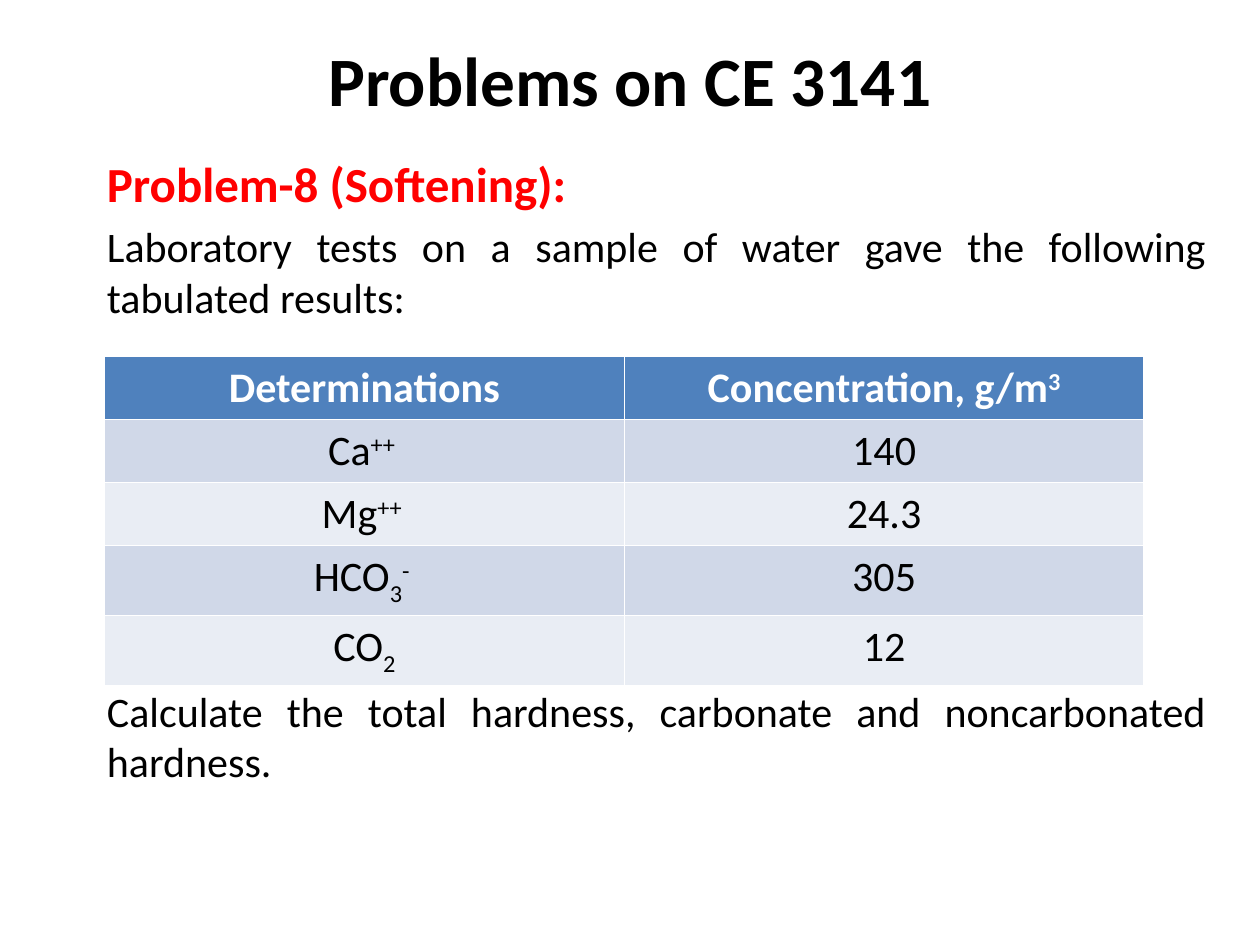
"""Build a slide posing a water softening problem with a table of test results."""
from dataclasses import dataclass

from pptx import Presentation
from pptx import util as u
from pptx.dml import color
from pptx.enum import text


@dataclass(frozen=True)
class Theme:
    font: str = "Calibri"
    title_size: float = 39.6
    heading_size: float = 28
    body_size: float = 24
    black: str = "000000"
    white: str = "FFFFFF"
    red: str = "FF0000"
    header_fill: str = "4F81BD"
    band_fills: tuple = ("D0D8E8", "E9EDF4")


THEME = Theme()
SUPERSCRIPT, SUBSCRIPT = 30000, -25000
RESULTS = [
    (["Determinations"], ["Concentration, g/m", ("3", SUPERSCRIPT)]),
    (["Ca", ("++ ", SUPERSCRIPT)], ["140"]),
    (["Mg", ("++ ", SUPERSCRIPT)], ["24.3"]),
    (["HCO", ("3", SUBSCRIPT), ("- ", SUPERSCRIPT)], ["305"]),
    (["CO", ("2", SUBSCRIPT)], ["12"]),
]


def write(paragraph, pieces, size=THEME.body_size, fill=THEME.black, bold=False,
          align=text.PP_ALIGN.CENTER, space_before=0):
    """Fill a paragraph with plain pieces or (text, baseline) pairs."""
    paragraph.alignment = align
    paragraph.space_before = u.Pt(space_before)
    for piece in pieces:
        content, baseline = (piece, 0) if isinstance(piece, str) else piece
        run = paragraph.add_run()
        run.text = content
        run.font.name = THEME.font
        run.font.size = u.Pt(size)
        run.font.bold = bold
        run.font.color.rgb = color.RGBColor.from_string(fill)
        if baseline:
            run.font._element.set("baseline", str(baseline))


def place_title(slide, content):
    """Move and format the title placeholder."""
    title = slide.shapes.title
    title.left, title.top = u.Inches(0.75), u.Inches(0.25)
    title.width, title.height = u.Inches(8.5), u.Inches(0.75)
    title.text_frame.vertical_anchor = text.MSO_ANCHOR.MIDDLE
    write(title.text_frame.paragraphs[0], [content], size=THEME.title_size, bold=True)


def add_text_box(slide, top, height):
    """Add a wrapping text box of body width and return its frame."""
    box = slide.shapes.add_textbox(u.Inches(0.75), u.Inches(top),
                                   u.Inches(8.92), u.Inches(height))
    box.text_frame.word_wrap = True
    return box.text_frame


def add_results_table(slide):
    """Add the table of determinations and concentrations."""
    table = slide.shapes.add_table(len(RESULTS), 2, u.Inches(0.83), u.Inches(2.83),
                                   u.Inches(8.25), u.Inches(2.5)).table
    for row, entries in enumerate(RESULTS):
        header = row == 0
        fill = THEME.header_fill if header else THEME.band_fills[(row - 1) % 2]
        for column, pieces in enumerate(entries):
            cell = table.cell(row, column)
            cell.fill.solid()
            cell.fill.fore_color.rgb = color.RGBColor.from_string(fill)
            write(cell.text_frame.paragraphs[0], pieces, bold=header,
                  fill=THEME.white if header else THEME.black)


def main():
    """Build and save the presentation."""
    presentation = Presentation()
    presentation.slide_width, presentation.slide_height = u.Inches(10), u.Inches(7.5)
    slide = presentation.slides.add_slide(presentation.slide_layouts[5])
    place_title(slide, "Problems on CE 3141")

    justify = text.PP_ALIGN.JUSTIFY
    problem = add_text_box(slide, 1.17, 1.5)
    write(problem.paragraphs[0], ["Problem-8 (Softening):"], size=THEME.heading_size,
          fill=THEME.red, bold=True, align=justify)
    write(problem.add_paragraph(),
          ["Laboratory tests on a sample of water gave the following tabulated results:"],
          align=justify, space_before=4.8)

    add_results_table(slide)

    question = add_text_box(slide, 5.39, 0.95)
    write(question.paragraphs[0],
          ["Calculate the total hardness, carbonate and noncarbonated hardness."],
          align=justify)
    presentation.save("out.pptx")


if __name__ == "__main__":
    main()
